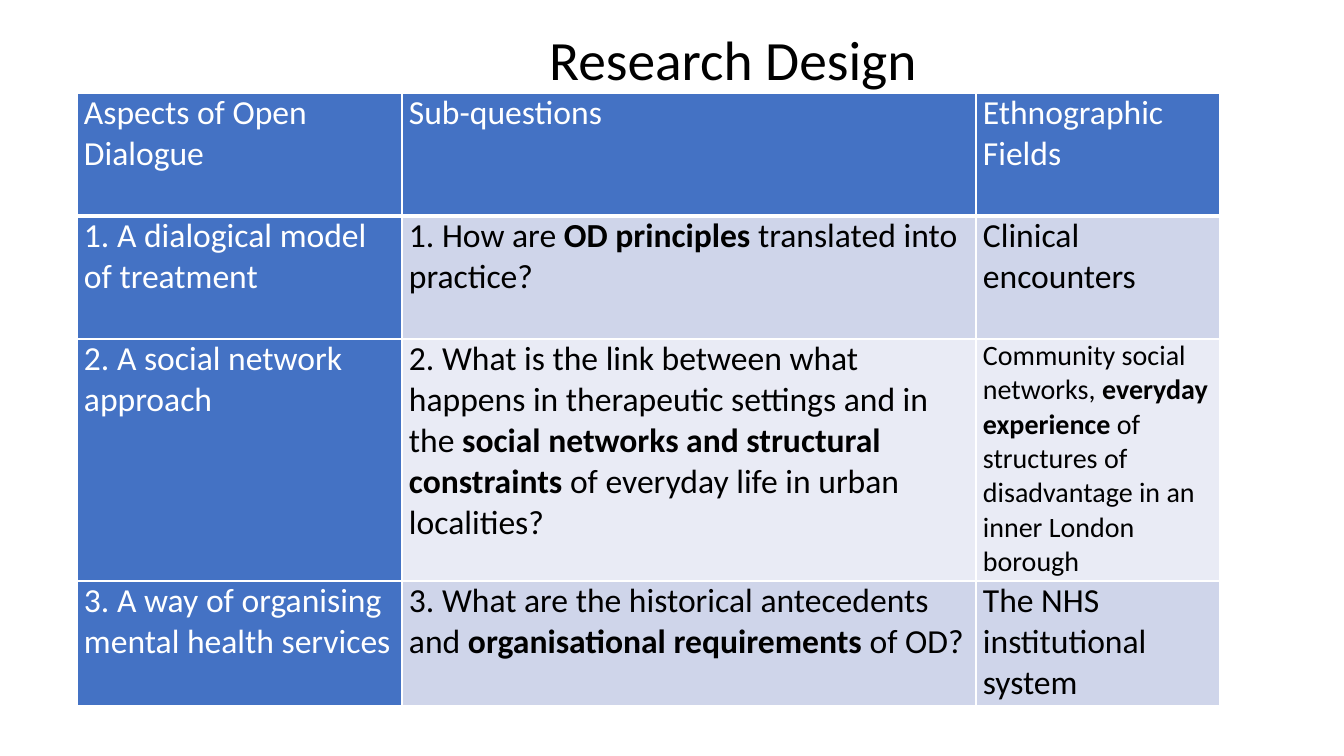
from lxml import etree
from pptx import Presentation
from pptx import util as u
from pptx.dml.color import RGBColor
from pptx.enum import text
from pptx.oxml.ns import qn

SCALE = 914400 / 100.8
INK = {"white": "FFFFFF", "black": "000000", "blue": "4472C4",
       "band": "CFD5EA", "pale": "E9EBF5"}
COLS = [325, 574, 244]
ROWS = [123, 123, 242, 125]
CELLS = [
    ["Aspects of Open Dialogue", "Sub-questions", "Ethnographic Fields"],
    ["1. A dialogical model of treatment",
     "1. How are *OD principles *translated into practice?",
     "Clinical encounters"],
    ["2. A social network approach",
     "2. What is the link between what happens in therapeutic settings and in the "
     "*social networks and structural constraints *of everyday life in urban localities?",
     "Community social networks, *everyday experience *of structures of "
     "disadvantage in an inner London borough"],
    ["3. A way of organising mental health services",
     "3. What are the historical antecedents and *organisational requirements *of OD?",
     "The NHS institutional system"],
]


def px(n):
    """Turn px into EMU."""
    return u.Emu(round(n * SCALE))


def color(name):
    """Look up a named colour."""
    return RGBColor.from_string(INK[name])


def write(para, words, size, ink):
    """Fill a paragraph, with the parts between asterisks in bold."""
    for i, part in enumerate(words.split("*")):
        run = para.add_run()
        run.text = part
        font = run.font
        font.name, font.size, font.bold = "Calibri", u.Pt(size), i % 2 == 1
        font.color.rgb = color(ink)


def edge(cell, base):
    """Draw white borders round a cell, with the given base width."""
    props = cell._tc.get_or_add_tcPr()
    for i, (side, width) in enumerate(zip("LRTB", (1, 1, 1, base))):
        line = etree.Element(qn(f"a:ln{side}"), w=str(u.Pt(width)))
        fill = etree.SubElement(line, qn("a:solidFill"))
        etree.SubElement(fill, qn("a:srgbClr"), val=INK["white"])
        props.insert(i, line)


def title(slide, x, y, w, h):
    """Place the centred heading."""
    frame = slide.shapes.add_textbox(px(x), px(y), px(w), px(h)).text_frame
    frame.word_wrap = True
    frame.vertical_anchor = text.MSO_ANCHOR.MIDDLE
    frame.margin_left = frame.margin_right = px(5)
    frame.margin_top = frame.margin_bottom = px(5)
    para = frame.paragraphs[0]
    para.alignment = text.PP_ALIGN.CENTER
    para.line_spacing = 0.9
    write(para, "Research Design", 39.6, "black")


def grid(slide, x, y):
    """Place the table of aspects, questions and fields."""
    table = slide.shapes.add_table(len(ROWS), len(COLS), px(x), px(y),
                                   px(sum(COLS)), px(sum(ROWS))).table
    for col, w in zip(table.columns, COLS):
        col.width = px(w)
    for r, h in enumerate(ROWS):
        table.rows[r].height = px(h)
        for c, words in enumerate(CELLS[r]):
            cell = table.cell(r, c)
            head = r == 0 or c == 0
            cell.margin_left = cell.margin_right = px(7)
            cell.margin_top = cell.margin_bottom = 0
            cell.fill.solid()
            cell.fill.fore_color.rgb = color(
                "blue" if head else "band" if r % 2 else "pale")
            edge(cell, 1 if r else 3)
            para = cell.text_frame.paragraphs[0]
            if r == 0 and c:
                para.alignment = text.PP_ALIGN.JUSTIFY
            write(para, words, 20 if (r, c) == (2, 2) else 24,
                  "white" if head else "black")


def main():
    """Build and save the slide."""
    deck = Presentation()
    deck.slide_width, deck.slide_height = px(1344), px(756)
    slide = deck.slides.add_slide(deck.slide_layouts[6])
    title(slide, 214, 34, 1038, 58)
    grid(slide, 77, 93)
    deck.save("out.pptx")


if __name__ == "__main__":
    main()
